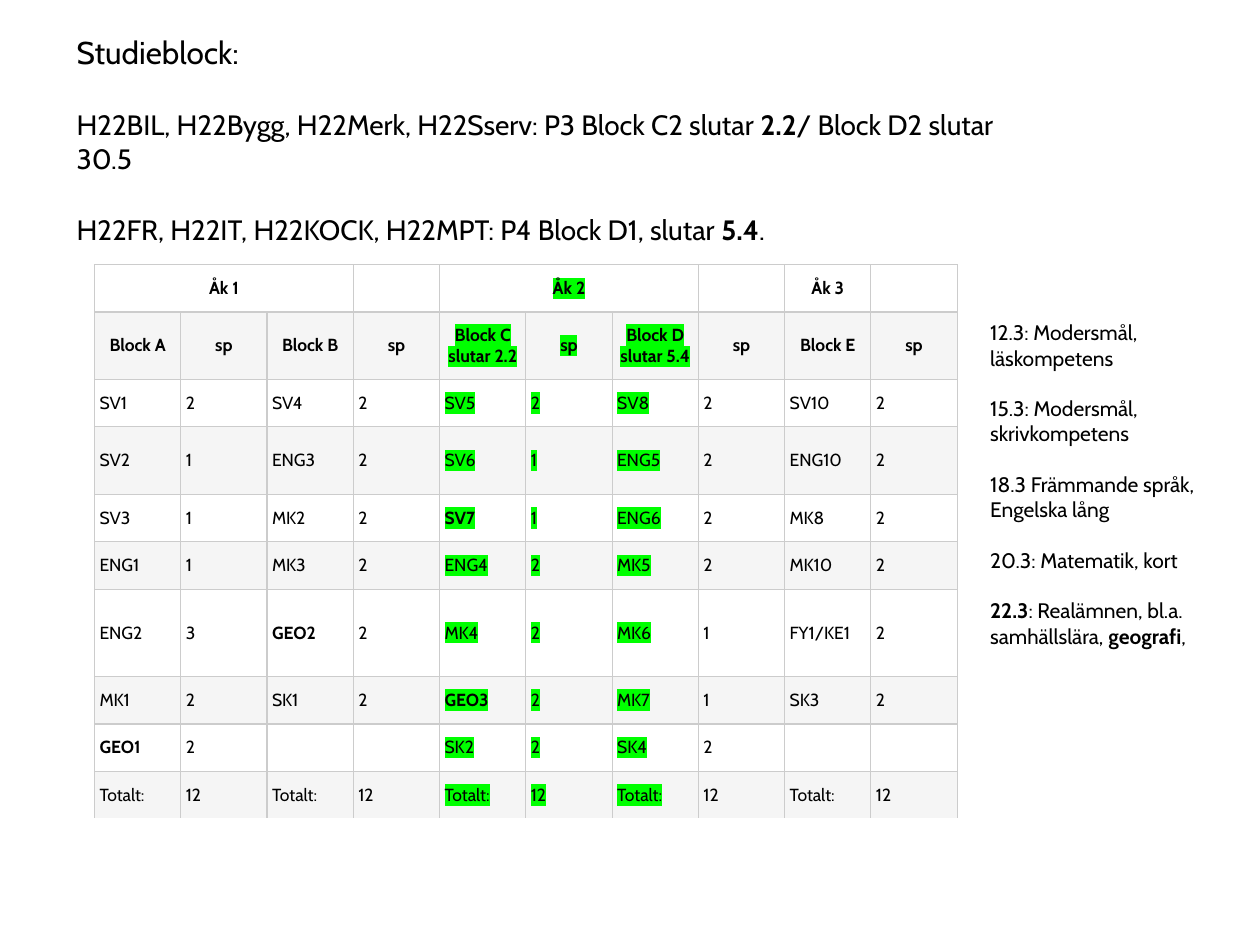
"""Build the study block slide: heading, course table and exam dates."""
from dataclasses import dataclass
from typing import NamedTuple

from lxml import etree
from pptx import Presentation
from pptx.dml.color import RGBColor
from pptx.enum.text import MSO_ANCHOR, PP_ALIGN
from pptx.oxml.ns import qn
from pptx.util import Inches, Pt

MIDDLE = MSO_ANCHOR.MIDDLE
CENTER, LEFT = PP_ALIGN.CENTER, PP_ALIGN.LEFT
BLACK = RGBColor(0x00, 0x00, 0x00)
WHITE = RGBColor(0xFF, 0xFF, 0xFF)
BAND_GRAY = RGBColor(0xF5, 0xF5, 0xF5)
BORDER_GRAY = RGBColor(0xCC, 0xCC, 0xCC)
GREEN = RGBColor(0x00, 0xFF, 0x00)
FONT = "Cabin"
SLIDE_WIDTH, SLIDE_HEIGHT = Inches(10), Inches(7.5)


@dataclass(frozen=True)
class Box:
    """An area in percent of the slide's width and height."""

    left: float
    top: float
    width: float
    height: float

    def lengths(self) -> tuple[int, int, int, int]:
        """Return left, top, width and height as slide lengths."""
        return (
            round(SLIDE_WIDTH * self.left / 100),
            round(SLIDE_HEIGHT * self.top / 100),
            round(SLIDE_WIDTH * self.width / 100),
            round(SLIDE_HEIGHT * self.height / 100),
        )


class Run(NamedTuple):
    """A piece of text with one format."""

    text: str
    size: float
    bold: bool = False
    highlighted: bool = False


HEADING_BOX = Box(5.1, 2.8, 78, 21.07)
TABLE_BOX = Box(7.5, 28, 68.5, 58.67)
EXAMS_BOX = Box(77.6, 33.2, 18.9, 39.07)

HEADING = [
    [Run("Studieblock:", 18)],
    [
        Run("H22BIL, H22Bygg, H22Merk, H22Sserv: P3 Block C2 slutar", 16),
        Run(" 2.2", 16, True),
        Run("/ Block D2 slutar 30.5", 16),
    ],
    [
        Run("H22FR, H22IT, H22KOCK, H22MPT: P4 Block D1, slutar ", 16),
        Run("5.4", 16, True),
        Run(".", 16),
    ],
]
EXAMS = [
    [Run("12.3: Modersmål, läskompetens", 12)],
    [Run("15.3: Modersmål, skrivkompetens", 12)],
    [Run("18.3 Främmande språk, Engelska lång", 12)],
    [Run("20.3: Matematik, kort", 12)],
    [
        Run("22.3", 12, True),
        Run(": Realämnen, bl.a. samhällslära, ", 12),
        Run("geografi", 12, True),
        Run(",", 12),
    ],
]
COURSES = [
    ["Åk 1", "", "", "", "Åk 2", "", "", "", "Åk 3", ""],
    ["Block A", "sp", "Block B", "sp", "Block C\nslutar 2.2", "sp",
     "Block D\nslutar 5.4", "sp", "Block E", "sp"],
    ["SV1", "2", "SV4", "2", "SV5", "2", "SV8", "2", "SV10", "2"],
    ["SV2", "1", "ENG3", "2", "SV6", "1", "ENG5", "2", "ENG10", "2"],
    ["SV3", "1", "MK2", "2", "SV7", "1", "ENG6", "2", "MK8", "2"],
    ["ENG1", "1", "MK3", "2", "ENG4", "2", "MK5", "2", "MK10", "2"],
    ["ENG2", "3", "GEO2", "2", "MK4", "2", "MK6", "1", "FY1/KE1", "2"],
    ["MK1", "2", "SK1", "2", "GEO3", "2", "MK7", "1", "SK3", "2"],
    ["GEO1", "2", "", "", "SK2", "2", "SK4", "2", "", ""],
    ["Totalt:", "12"] * 5,
]
ROW_WEIGHTS = [38, 54, 38, 54, 38, 38, 70, 38, 38, 38]
HEADER_ROWS = 2
MERGED_STARTS, MERGED_COLUMNS = (0, 4), 3
CURRENT_YEAR_COLUMNS = range(4, 7)
BOLD_COURSES = {"SV7", "GEO1", "GEO2", "GEO3"}


def add_run(paragraph, content: Run) -> None:
    """Append one formatted run to the paragraph."""
    run = paragraph.add_run()
    run.text = content.text
    run.font.size = Pt(content.size)
    run.font.bold = content.bold
    run.font.color.rgb = BLACK
    run.font.name = FONT
    if content.highlighted:
        highlight = etree.Element(qn("a:highlight"))
        etree.SubElement(highlight, qn("a:srgbClr"), val=str(GREEN))
        run.font._element.find(qn("a:solidFill")).addnext(highlight)


def add_text(slide, box: Box, paragraphs: list[list[Run]], gap: float) -> None:
    """Add a wrapped text box with a gap in points between paragraphs."""
    frame = slide.shapes.add_textbox(*box.lengths()).text_frame
    frame.word_wrap = True
    for index, runs in enumerate(paragraphs):
        paragraph = frame.add_paragraph() if index else frame.paragraphs[0]
        paragraph.space_before = Pt(gap if index else 0)
        for content in runs:
            add_run(paragraph, content)


def add_borders(cell, sides: str) -> None:
    """Draw thin gray lines on the named sides of the cell."""
    properties = cell._tc.get_or_add_tcPr()
    for side in sides:
        line = etree.SubElement(properties, qn(f"a:ln{side}"), w=str(Pt(0.75)))
        fill = etree.SubElement(line, qn("a:solidFill"))
        etree.SubElement(fill, qn("a:srgbClr"), val=str(BORDER_GRAY))


def fill_cell(cell, text: str, row: int, column: int) -> None:
    """Style one table cell and write its text."""
    add_borders(cell, "LRT" if row == len(COURSES) - 1 else "LRTB")
    cell.fill.solid()
    cell.fill.fore_color.rgb = BAND_GRAY if row % 2 else WHITE
    cell.margin_left = cell.margin_right = Inches(0.04)
    cell.margin_top = cell.margin_bottom = Inches(0.03)
    cell.vertical_anchor = MIDDLE
    if not text:
        return
    is_header = row < HEADER_ROWS
    paragraph = cell.text_frame.paragraphs[0]
    paragraph.alignment = CENTER if is_header else LEFT
    bold = is_header or text in BOLD_COURSES
    for index, line in enumerate(text.split("\n")):
        if index:
            paragraph.add_line_break()
        add_run(paragraph, Run(line, 10, bold, column in CURRENT_YEAR_COLUMNS))


def add_course_table(slide, box: Box) -> None:
    """Add the table of courses per block and year."""
    lengths = box.lengths()
    width, height = lengths[2:]
    column_count = len(COURSES[0])
    table = slide.shapes.add_table(len(COURSES), column_count, *lengths).table
    table.first_row = table.horz_banding = False
    for column in table.columns:
        column.width = width // column_count
    for row, weight in zip(table.rows, ROW_WEIGHTS):
        row.height = round(height * weight / sum(ROW_WEIGHTS))
    for row, texts in enumerate(COURSES):
        for column, text in enumerate(texts):
            fill_cell(table.cell(row, column), text, row, column)
    for start in MERGED_STARTS:
        table.cell(0, start).merge(table.cell(0, start + MERGED_COLUMNS - 1))


def main() -> None:
    """Build and save the presentation."""
    presentation = Presentation()
    presentation.slide_width = SLIDE_WIDTH
    presentation.slide_height = SLIDE_HEIGHT
    slide = presentation.slides.add_slide(presentation.slide_layouts[6])
    add_course_table(slide, TABLE_BOX)
    add_text(slide, HEADING_BOX, HEADING, 21.5)
    add_text(slide, EXAMS_BOX, EXAMS, 14.5)
    presentation.save("out.pptx")


if __name__ == "__main__":
    main()
